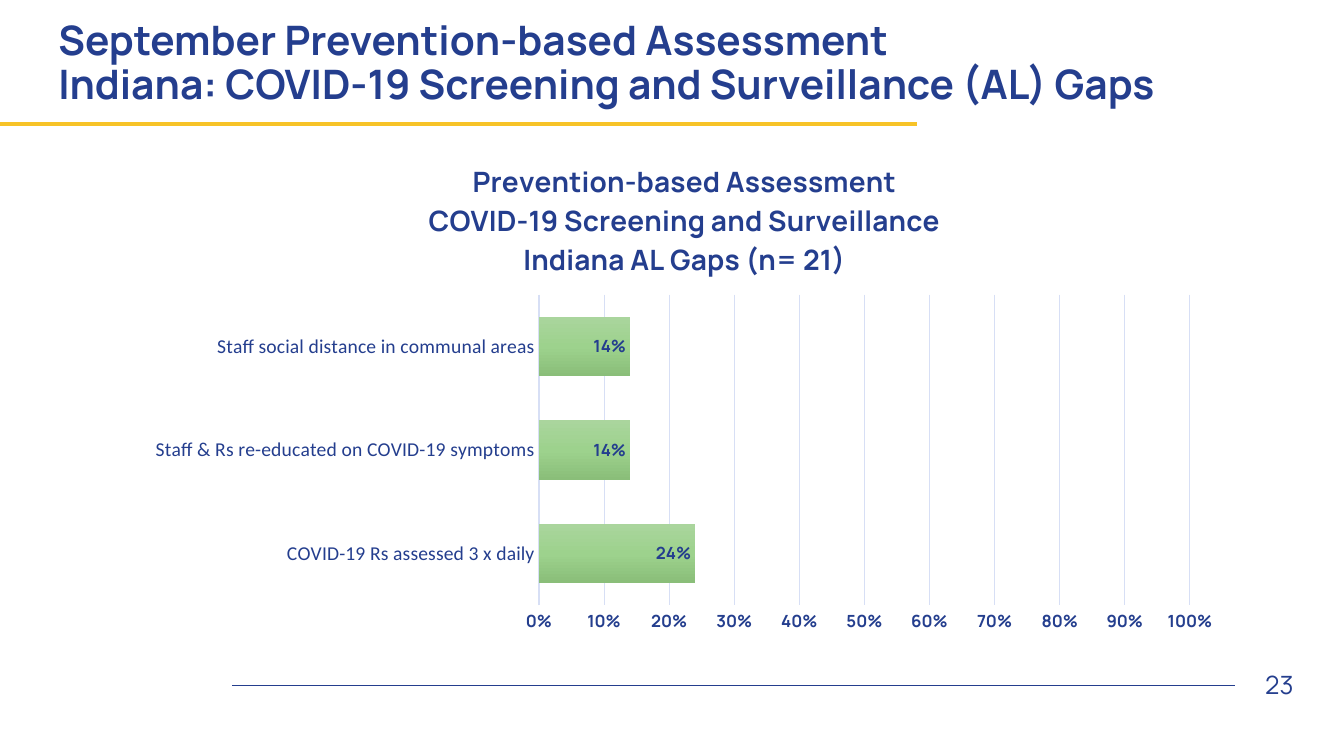
from copy import deepcopy

from lxml import etree
from pptx import Presentation
from pptx.chart.data import CategoryChartData
from pptx.dml.color import RGBColor
from pptx.enum.chart import XL_CHART_TYPE, XL_LABEL_POSITION, XL_TICK_MARK
from pptx.enum.shapes import MSO_CONNECTOR
from pptx.enum.text import MSO_ANCHOR, MSO_AUTO_SIZE, PP_ALIGN
from pptx.oxml.ns import qn
from pptx.util import Pt

BAR_CHART = XL_CHART_TYPE.BAR_CLUSTERED
INSIDE_END = XL_LABEL_POSITION.INSIDE_END
NO_TICK = XL_TICK_MARK.NONE
STRAIGHT = MSO_CONNECTOR.STRAIGHT
MIDDLE = MSO_ANCHOR.MIDDLE
NO_FIT = MSO_AUTO_SIZE.NONE
LEFT, CENTER, RIGHT = PP_ALIGN.LEFT, PP_ALIGN.CENTER, PP_ALIGN.RIGHT
TITLE_ONLY = 5

COLORS = {"navy": "243E8E", "gold": "F7C327", "grid": "D7DFF5"}
SERIES_GRADIENTS = [["74B35C", "5EAD38", "529F2D"],
                    ["AAD59D", "9DD28D", "8ABE79"]]
HEADING_FONT = "Manrope"
CHART_WIDTH, CHART_HEIGHT = 787, 357

TITLE = ("September Prevention-based Assessment\v"
         "Indiana: COVID-19 Screening and Surveillance (AL) Gaps")
CHART_TITLE = ["Prevention-based Assessment",
               "COVID-19 Screening and Surveillance",
               "Indiana AL Gaps (n= 21)"]
GAPS = {"COVID-19 Rs assessed 3 x daily": 0.24,
        "Staff & Rs re-educated on COVID-19 symptoms": 0.14,
        "Staff social distance in communal areas": 0.14}


def color(name):
    return RGBColor.from_string(COLORS[name])


def style_font(font, size, bold=False, name=HEADING_FONT):
    font.name, font.size, font.bold = name, Pt(size), bold
    font.color.rgb = color("navy")


def add_title(page):
    title = page.shapes.title
    title.left, title.top, title.width, title.height = Pt(34.5), Pt(16), Pt(860), Pt(60)
    frame = title.text_frame
    frame.text = TITLE
    frame.auto_size, frame.vertical_anchor = NO_FIT, MIDDLE
    para = frame.paragraphs[0]
    para.alignment, para.line_spacing = LEFT, 0.9
    style_font(para.font, 29, bold=True)


def add_rule(page, left, right, y, color_name, weight):
    rule = page.shapes.add_connector(STRAIGHT, Pt(left), Pt(y), Pt(right), Pt(y))
    rule.line.color.rgb = color(color_name)
    rule.line.width = Pt(weight)
    etree.SubElement(rule._element.spPr, qn("a:effectLst"))


def add_page_number(page, number):
    box = page.shapes.add_textbox(Pt(882), Pt(474.5), Pt(49), Pt(29))
    frame = box.text_frame
    frame.word_wrap, frame.vertical_anchor = True, MIDDLE
    para = frame.paragraphs[0]
    para.text, para.alignment = number, RIGHT
    style_font(para.font, 18)


def place(element, left, top, width=None, height=None):
    """Position a chart part in points from the chart's top left corner."""
    layout = element.find(qn("c:layout"))
    if layout is None:
        layout = etree.Element(qn("c:layout"))
        before = element.find(qn("c:tx"))
        element.insert(0 if before is None else element.index(before) + 1, layout)
    settings = {"xMode": "edge", "yMode": "edge",
                "x": left / CHART_WIDTH, "y": top / CHART_HEIGHT}
    if width:
        settings = {"layoutTarget": "inner", **settings,
                    "w": width / CHART_WIDTH, "h": height / CHART_HEIGHT}
    manual = etree.SubElement(layout, qn("c:manualLayout"))
    for key, value in settings.items():
        etree.SubElement(manual, qn(f"c:{key}")).set("val", str(value))


def add_chart_title(chart):
    frame = chart.chart_title.text_frame
    for index, line in enumerate(CHART_TITLE):
        para = frame.paragraphs[0] if index == 0 else frame.add_paragraph()
        para.text, para.alignment = line, CENTER
        style_font(para.font, 20, bold=True)
    chart.chart_title.include_in_layout = False
    place(chart.chart_title._element, 208, 10.5)


def style_axes(chart):
    categories, values = chart.category_axis, chart.value_axis
    for axis in (categories, values):
        axis.major_tick_mark = axis.minor_tick_mark = NO_TICK
    style_font(categories.tick_labels.font, 14, name="Calibri")
    categories.format.line.color.rgb = color("grid")
    categories.format.line.width = Pt(1)

    style_font(values.tick_labels.font, 12, bold=True)
    values.tick_labels.number_format = "0%"
    values.tick_labels.number_format_is_linked = False
    values.minimum_scale, values.maximum_scale, values.major_unit = 0, 1, 0.1
    values.format.line.fill.background()
    values.has_major_gridlines = True
    grid = values.major_gridlines.format.line
    grid.color.rgb, grid.width = color("grid"), Pt(0.75)


def fill_series(series, shades):
    fill = series.format.fill
    fill.gradient()
    fill.gradient_angle = 270
    stop_list = series._element.find(".//" + qn("a:gsLst"))
    stop_list.insert(1, deepcopy(stop_list[0]))
    for index, (stop, shade) in enumerate(zip(fill.gradient_stops, shades)):
        stop.position = index / 2
        stop.color.rgb = RGBColor.from_string(shade)


def style_bars(plot):
    plot.gap_width, plot.overlap, plot.vary_by_categories = 75, 40, False
    empty, gaps = plot.series
    for series, shades in zip((empty, gaps), SERIES_GRADIENTS):
        fill_series(series, shades)
    # A series without a values element takes no room beside the bars.
    empty._element.remove(empty._element.find(qn("c:val")))

    labels = gaps.data_labels
    labels.show_value, labels.position = True, INSIDE_END
    labels.number_format, labels.number_format_is_linked = "0%", False
    style_font(labels.font, 12, bold=True)


def add_gap_chart(page):
    data = CategoryChartData(number_format="0%")
    data.categories = list(GAPS)
    data.add_series("Series 1", [])
    data.add_series("Series 2", GAPS.values())
    chart = page.shapes.add_chart(
        BAR_CHART, Pt(96), Pt(102), Pt(CHART_WIDTH), Pt(CHART_HEIGHT), data).chart
    chart.has_legend = False
    style_font(chart.font, 10, name="Arial")
    add_chart_title(chart)
    style_axes(chart)
    style_bars(chart.plots[0])
    place(chart._chartSpace.chart.plotArea, 289, 108.5, 465, 222)


def main():
    deck = Presentation()
    deck.slide_width, deck.slide_height = Pt(960), Pt(540)
    page = deck.slides.add_slide(deck.slide_layouts[TITLE_ONLY])
    add_rule(page, 166, 882, 489.5, "navy", 1)
    add_rule(page, 0, 655, 88.5, "gold", 3)
    add_page_number(page, "23")
    add_title(page)
    add_gap_chart(page)
    deck.save("out.pptx")


if __name__ == "__main__":
    main()
